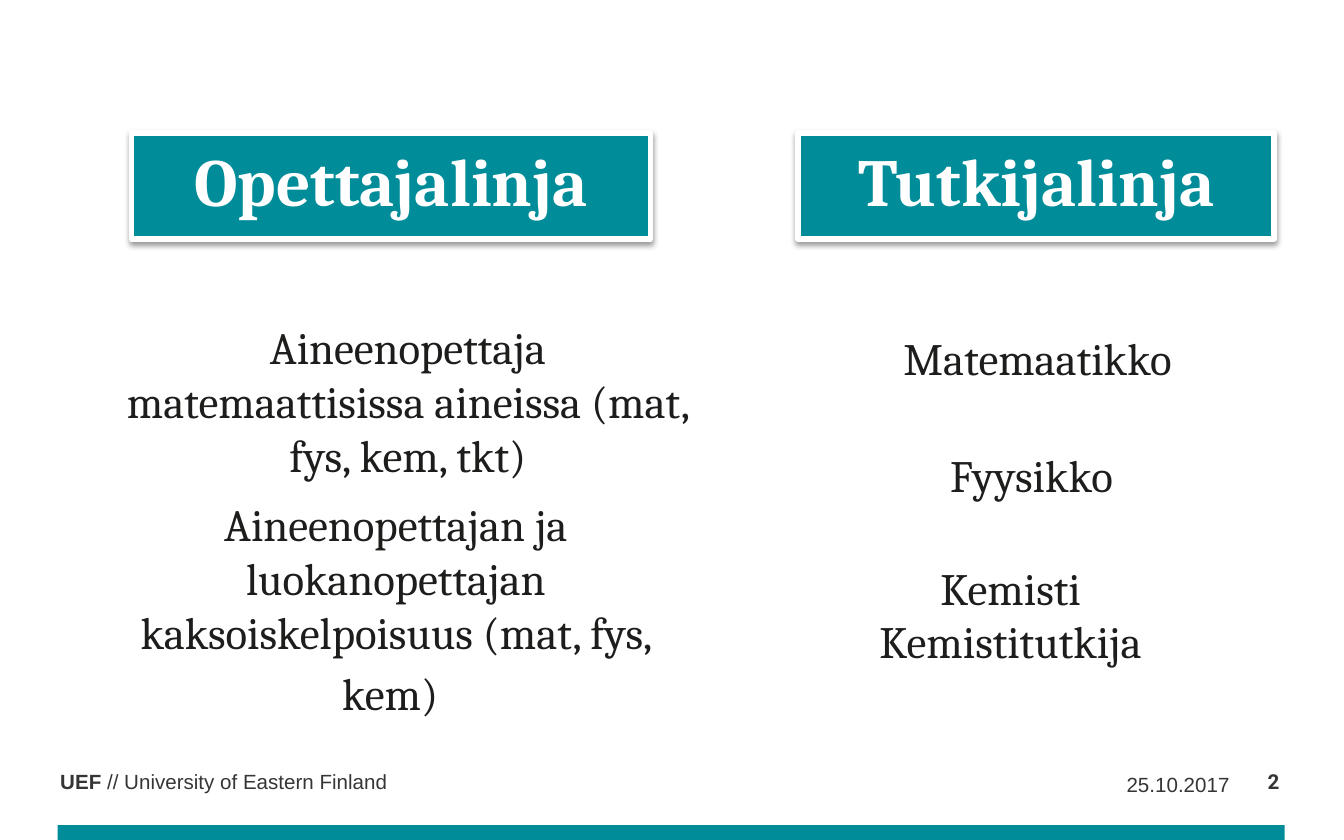
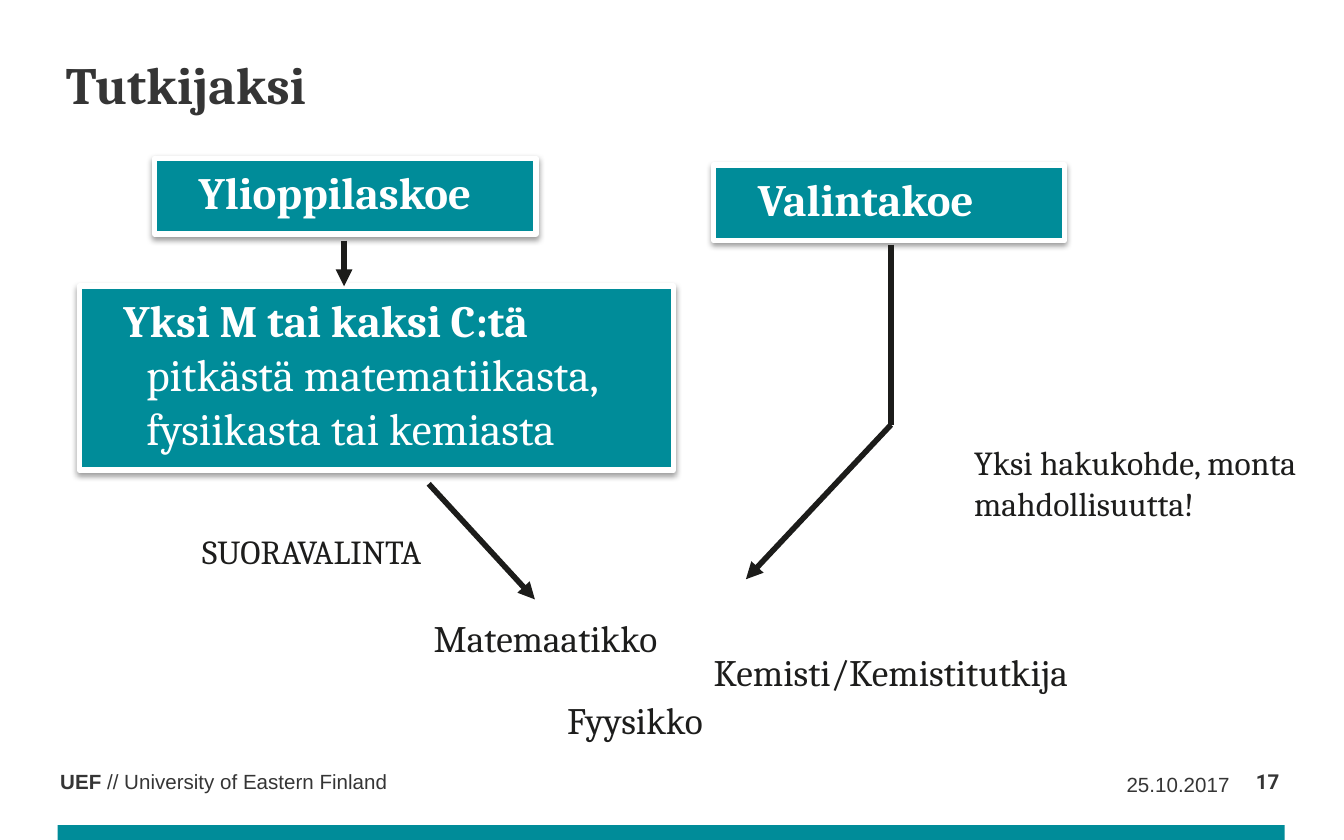
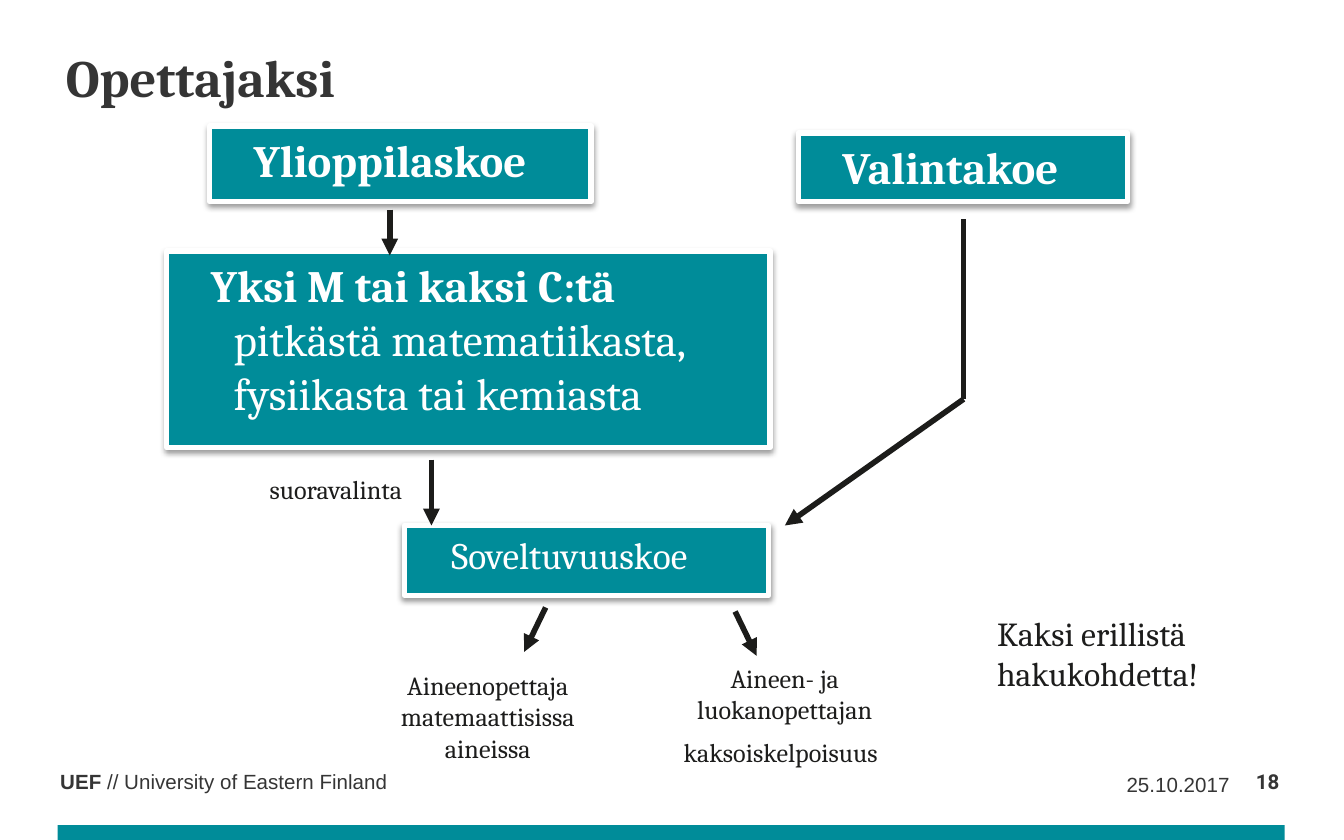
"""Builds three slides on the study lines and the admission routes that lead to them."""
from lxml.etree import SubElement
from pptx import Presentation
from pptx.dml.color import RGBColor
from pptx.enum.shapes import MSO_CONNECTOR, MSO_SHAPE
from pptx.enum.text import MSO_ANCHOR, MSO_AUTO_SIZE, PP_ALIGN
from pptx.oxml.ns import qn
from pptx.util import Inches, Pt

colour = RGBColor.from_string
TEAL, WHITE, INK, GREY, ARROW = "008C99", "FFFFFF", "1D1D1C", "353535", "1C1C1A"
LEFT, CENTER, RIGHT = PP_ALIGN.LEFT, PP_ALIGN.CENTER, PP_ALIGN.RIGHT
BODY = "Cambria"
BOX_INSETS = (1, 0.5, 1, 0.5)

deck = Presentation()
deck.slide_width, deck.slide_height = Inches(10), Inches(6.25)
CELL = deck.slide_width / 100


def cells(*counts):
    """Turns counts of grid cells into lengths."""
    return [round(count * CELL) for count in counts]


def write(holder, paragraphs, ink=INK, align=LEFT, font=BODY, insets=BOX_INSETS,
          anchor=MSO_ANCHOR.TOP, hanging=0, spacing=None):
    """Fills a shape with paragraphs of (text, size, bold) runs."""
    frame = holder.text_frame
    frame.word_wrap = True
    frame.auto_size = MSO_AUTO_SIZE.NONE
    frame.vertical_anchor = anchor
    (frame.margin_left, frame.margin_top,
     frame.margin_right, frame.margin_bottom) = cells(*insets)
    for index, runs in enumerate(paragraphs):
        paragraph = frame.add_paragraph() if index else frame.paragraphs[0]
        paragraph.alignment = align
        if spacing:
            paragraph.line_spacing = spacing
        if hanging:
            paragraph.level = 1
            properties = paragraph._p.get_or_add_pPr()
            margin, indent = cells(4, -hanging)
            properties.set("marL", str(margin))
            properties.set("indent", str(indent))
        for text, size, bold in runs:
            run = paragraph.add_run()
            run.text = text
            run.font.name, run.font.size, run.font.bold = font, Pt(size), bold
            run.font.color.rgb = colour(ink)


exam = [("Ylioppilaskoe", 24, True)]
entrance = [("Valintakoe", 24, True)]
grades = [("Yksi M tai kaksi C:tä ", 24, True),
          ("pitkästä matematiikasta, fysiikasta tai kemiasta", 24, False)]

pages = [
    dict(
        number="2", title=None, title_top=0,
        bands=[((9.8, 9.9, 38.6, 7.9), [("Opettajalinja", 36, True)], 0),
               ((59.4, 9.9, 35.4, 7.9), [("Tutkijalinja", 36, True)], 0)],
        labels=[
            ((63.4, 24.1, 27.6, 5.1), CENTER, [[("Matemaatikko", 24, False)]]),
            ((66.5, 32.8, 20.5, 5.1), CENTER, [[("Fyysikko", 24, False)]]),
            ((63.4, 41.2, 23.6, 9.1), CENTER, [[("Kemisti Kemistitutkija", 24, False)]]),
            ((8.3, 23.3, 44.1, 9.1), CENTER,
             [[("Aineenopettaja matemaattisissa aineissa (mat, fys, kem, tkt)", 24, False)]]),
            ((6.2, 36.5, 46.5, 13.8), CENTER,
             [[("Aineenopettajan ja luokanopettajan kaksoiskelpoisuus (mat, fys, kem)",
                24, False), (" ", 28, False)]]),
        ],
        routes=[],
    ),
    dict(
        number="17", title="Tutkijaksi", title_top=2.4,
        bands=[((11.5, 11.8, 28.4, 5.6), exam, 1.7),
               ((53.1, 12.3, 26.1, 5.6), entrance, 1.7),
               ((5.9, 21.3, 44.2, 13.7), grades, 1.7)],
        labels=[
            ((26.8, 45.3, 27.6, 4.4), CENTER, [[("Matemaatikko", 20, False)]]),
            ((37, 51.4, 20.5, 4.4), CENTER, [[("Fyysikko", 20, False)]]),
            ((50.8, 47.8, 31, 4.4), CENTER, [[("Kemisti/Kemistitutkija", 20, False)]]),
            ((9.4, 39, 27.6, 3.4), CENTER, [[("SUORAVALINTA", 18, False)]]),
            ((71.5, 32.4, 27.6, 7.1), LEFT,
             [[("Yksi hakukohde, monta mahdollisuutta!", 18, False)]]),
        ],
        routes=[[(25.6, 17.9), (25.6, 21.3)],
                [(31.9, 36), (39.8, 44.6)],
                [(66.3, 18.2), (66.3, 31.6), (55.5, 43.1)]],
    ),
    dict(
        number="18", title="Opettajaksi", title_top=1.9,
        bands=[((15.6, 9.4, 28.4, 5.6), exam, 1.7),
               ((59.4, 9.9, 24.5, 5.1), entrance, 1.7),
               ((12.4, 18.7, 44.9, 14.6), grades, 1.7),
               ((30.1, 39.1, 27.1, 5.2), [("Soveltuvuuskoe", 20, False)], 1.5)],
        labels=[
            ((25.7, 49.3, 21.2, 8.1), CENTER,
             [[("Aineenopettaja matemaattisissa aineissa", 14, False)]]),
            ((46.9, 48.8, 23, 9.1), CENTER,
             [[("Aineen- ja luokanopettajan", 14, False)],
              [("kaksoiskelpoisuus", 14, False), (" ", 20, False)]]),
            ((11.2, 34.7, 27.6, 3.4), CENTER, [[("suoravalinta", 14, False)]]),
            ((73.2, 45.1, 18.2, 7.1), LEFT, [[("Kaksi erillistä hakukohdetta!", 18, False)]]),
        ],
        routes=[[(29, 15.6), (29, 19)],
                [(32.1, 34.2), (32.1, 39.1)],
                [(40.6, 45.2), (39, 48.5)],
                [(54.7, 45.5), (56.3, 48.8)],
                [(71.7, 16.3), (71.7, 29.7), (58.4, 39.1)]],
    ),
]

TITLE_ONLY, BLANK = deck.slide_layouts[5], deck.slide_layouts[6]

for page in pages:
    slide = deck.slides.add_slide(TITLE_ONLY if page["title"] else BLANK)
    shapes = slide.shapes

    if page is pages[0]:
        university = shapes.add_textbox(*cells(3.5, 56.7, 38.6, 2.9))
        write(university, [[("UEF", 11, True), (" // University of Eastern Finland", 11, False)]],
              GREY, font="Arial")
        base = shapes.add_shape(MSO_SHAPE.RECTANGLE, *cells(4.3, 61.4, 91.3, 1.3))
        base.shadow.inherit = False
        base.fill.solid()
        base.fill.fore_color.rgb = colour(TEAL)
        base.line.fill.background()
        for shared in (university, base):
            deck.slide_master.shapes.element.append(shared.element)

    if page["title"]:
        title = shapes.title
        title.left, title.top, title.width, title.height = cells(3.9, page["title_top"], 91.3, 9.2)
        write(title, [[(page["title"], 28, True)]], GREY, spacing=1.21)

    write(shapes.add_textbox(*cells(81.9, 57.2, 9.6, 2.3)), [[("25.10.2017", 11, False)]],
          GREY, RIGHT, "Arial", (0, 0, 0, 0), MSO_ANCHOR.MIDDLE)
    write(shapes.add_textbox(*cells(91.3, 57, 3.9, 2.3)), [[(page["number"], 11, True)]],
          GREY, RIGHT, "Roboto", (0, 0.2, 0, 0))

    for place, runs, hanging in page["bands"]:
        band = shapes.add_shape(MSO_SHAPE.RECTANGLE, *cells(*place))
        band.fill.solid()
        band.fill.fore_color.rgb = colour(TEAL)
        band.line.color.rgb = colour(WHITE)
        band.line.width = Pt(3)
        band.shadow.inherit = False
        effects = band.element.spPr.find(qn("a:effectLst"))
        shade = SubElement(effects, qn("a:outerShdw"), blurRad=str(Pt(3.1)), dist=str(Pt(1.6)),
                           dir="5400000", rotWithShape="0")
        black = SubElement(shade, qn("a:srgbClr"), val="000000")
        SubElement(black, qn("a:alpha"), val="38000")
        write(band, [runs], WHITE, LEFT if hanging else CENTER, hanging=hanging)

    for place, align, paragraphs in page["labels"]:
        write(shapes.add_textbox(*cells(*place)), paragraphs, align=align)

    for route in page["routes"]:
        for start, end in zip(route, route[1:]):
            leg = shapes.add_connector(MSO_CONNECTOR.STRAIGHT, *cells(*start, *end))
            leg.line.color.rgb = colour(ARROW)
            leg.line.width = Pt(3)
            properties = leg.element.spPr
            SubElement(properties, qn("a:effectLst"))
            if end == route[-1]:
                SubElement(properties.find(qn("a:ln")), qn("a:tailEnd"), type="triangle")

deck.save("out.pptx")
